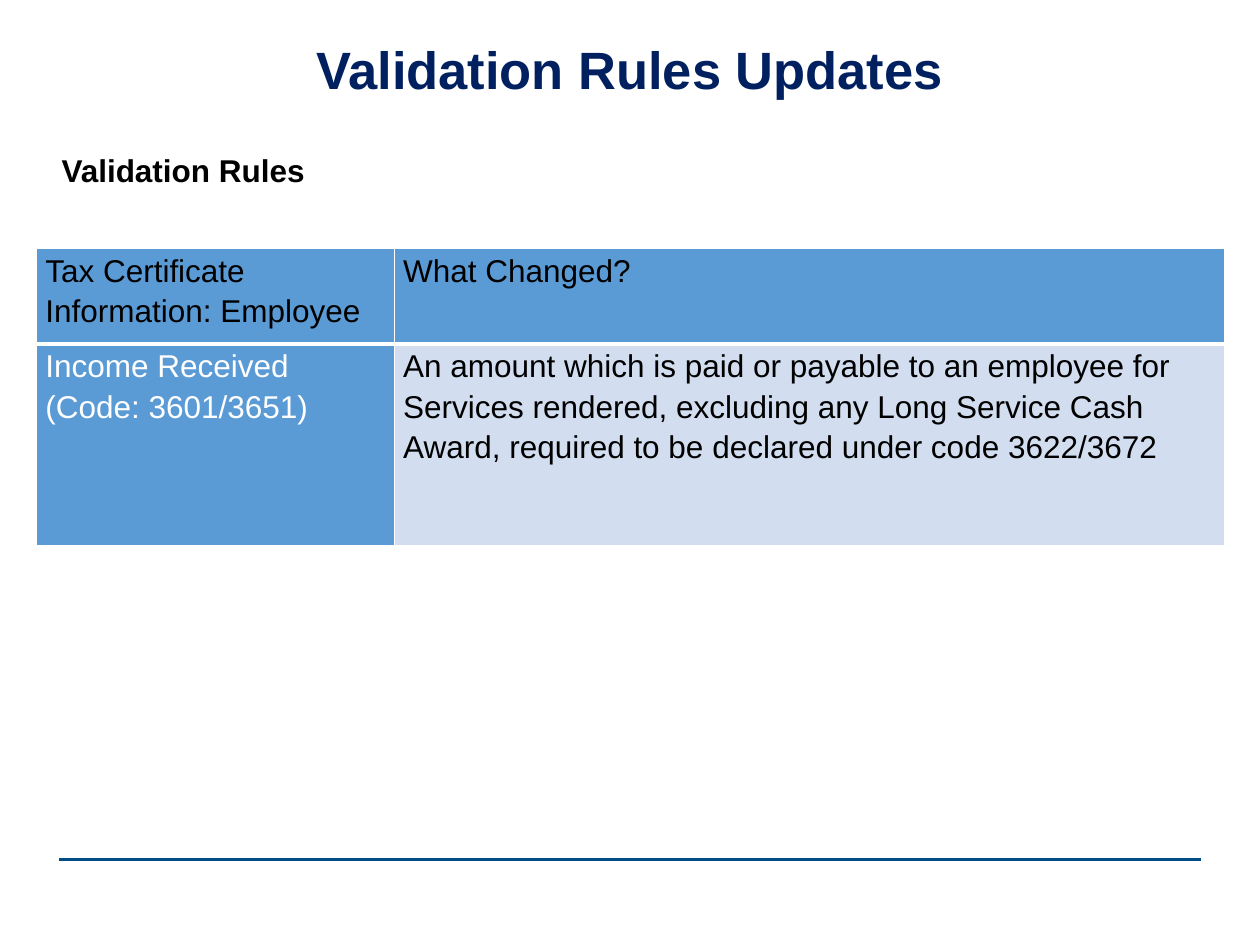
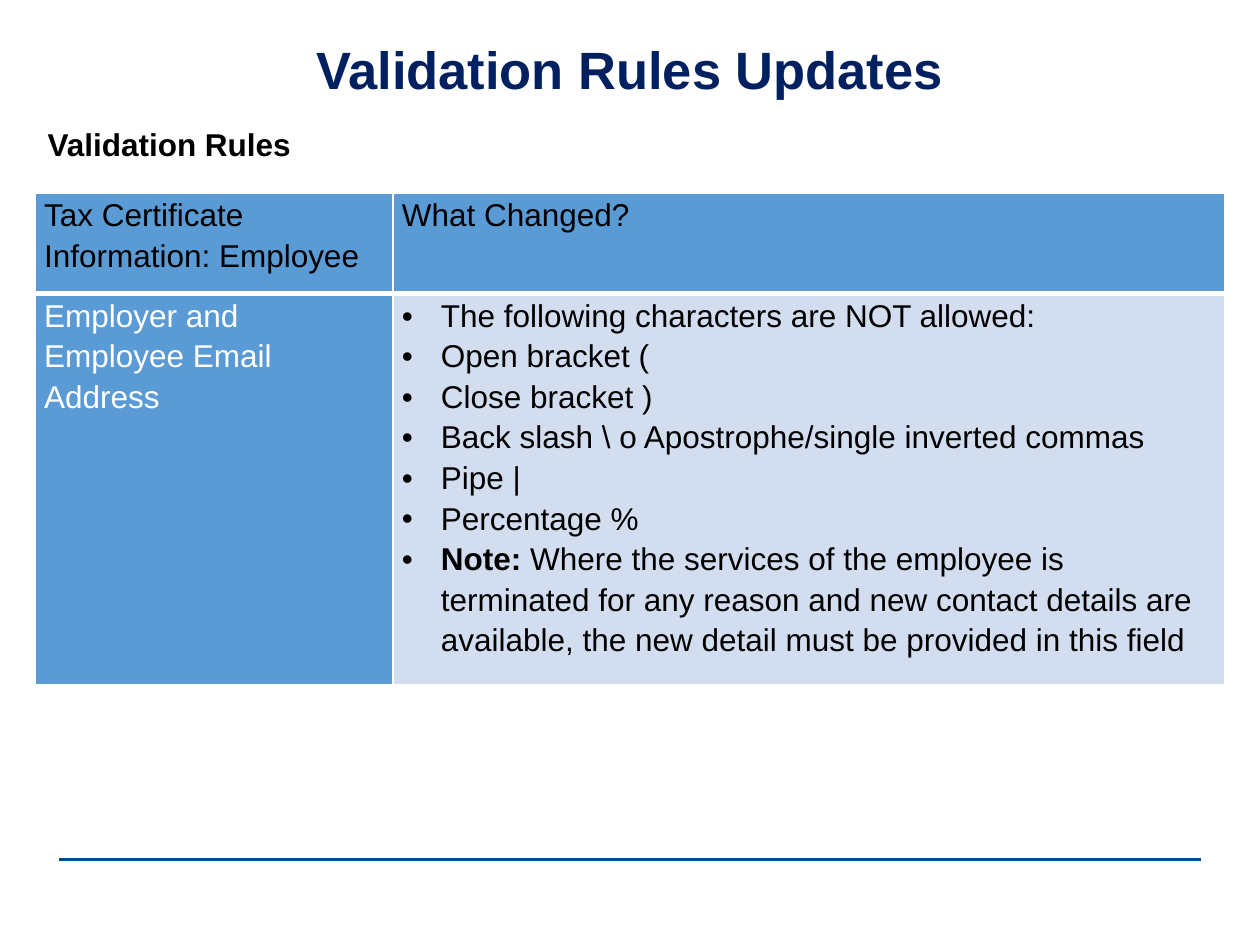
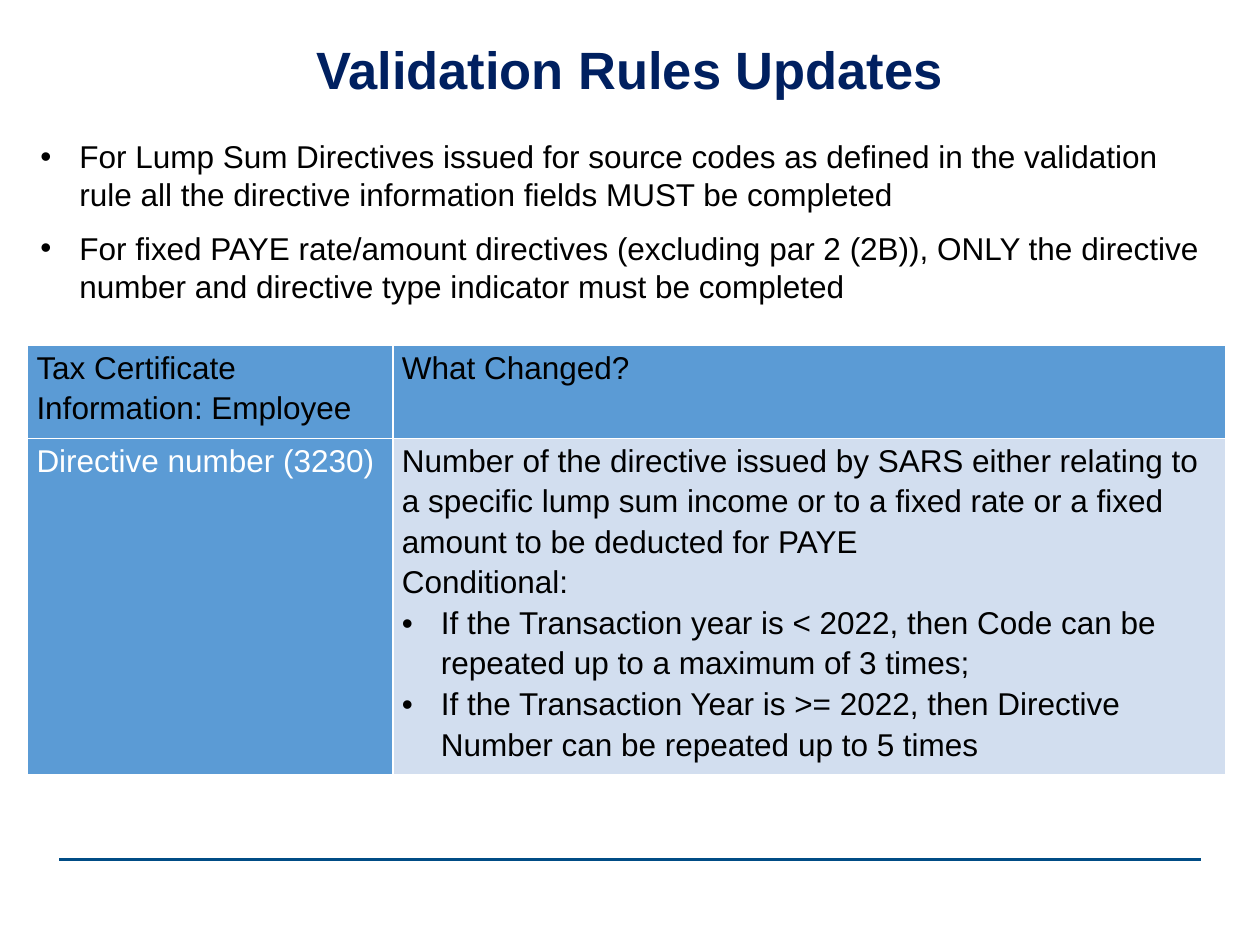
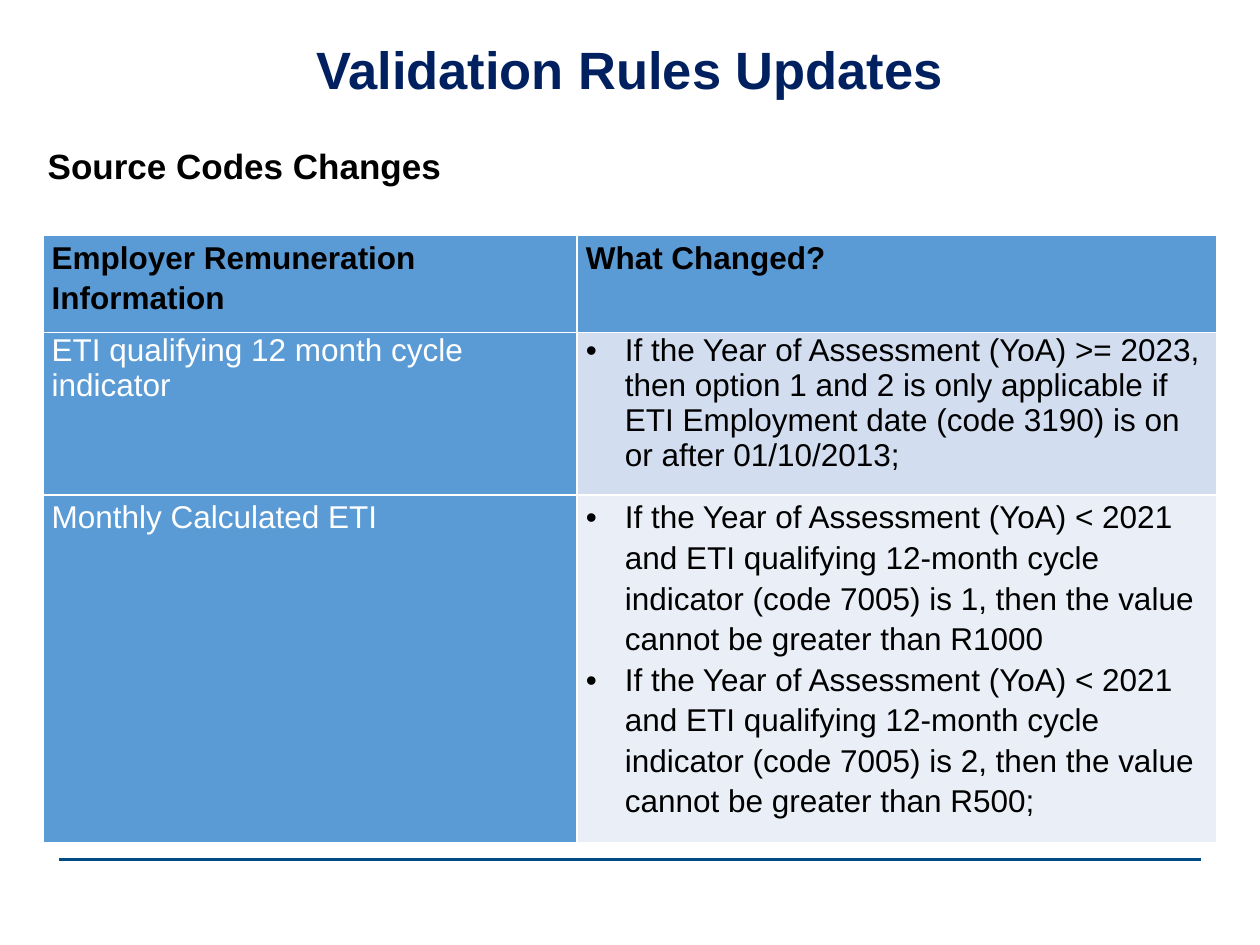
import pptx
import pptx.dml.color
import pptx.enum.shapes
import pptx.enum.text
import pptx.oxml
import pptx.oxml.ns
import pptx.util

NAVY = pptx.dml.color.RGBColor(0x00, 0x20, 0x60)
RULE_BLUE = pptx.dml.color.RGBColor(0x00, 0x4C, 0x85)
HEADER_BLUE = pptx.dml.color.RGBColor(0x5B, 0x9B, 0xD5)
BANDS = [pptx.dml.color.RGBColor(0xD2, 0xDE, 0xEF),
         pptx.dml.color.RGBColor(0xEA, 0xEF, 0xF7)]
BLACK = pptx.dml.color.RGBColor(0, 0, 0)
WHITE = pptx.dml.color.RGBColor(255, 255, 255)
FONT = "Arial"
INDENT = pptx.util.Inches(0.31)
BULLET = "• "
LEAD = "Note: "
ALIGN = pptx.enum.text.PP_ALIGN
ANCHOR = pptx.enum.text.MSO_ANCHOR
AUTO_SIZE = pptx.enum.text.MSO_AUTO_SIZE

prs = pptx.Presentation()
prs.slide_width = pptx.util.Inches(10)
prs.slide_height = pptx.util.Inches(7.5)


def grid(*lengths):
    """Turn lengths on a grid of 100 columns by 75 square rows into EMU."""
    return [round(n * prs.slide_width / 100) for n in lengths]


def write(tf, text, size=18, color=BLACK, bold=False, align=ALIGN.LEFT,
          spacing=1.0, before=0):
    """Fill a text frame, one paragraph a line; "• " starts a bullet."""
    tf.word_wrap = True
    for i, line in enumerate(text.split("\n")):
        p = tf.paragraphs[0] if i == 0 else tf.add_paragraph()
        if line.startswith(BULLET):
            line = line[len(BULLET):]
            pPr = p._p.get_or_add_pPr()
            pPr.set("marL", str(INDENT))
            pPr.set("indent", str(-INDENT))
            pPr.append(pptx.oxml.parse_xml(
                f'<a:buFont {pptx.oxml.ns.nsdecls("a")} typeface="Arial"/>'))
            pPr.append(pptx.oxml.parse_xml(
                f'<a:buChar {pptx.oxml.ns.nsdecls("a")} char="•"/>'))
        p.alignment = align
        p.line_spacing = spacing
        p.space_before = pptx.util.Pt(before if i else 0)
        lead = LEAD if line.startswith(LEAD) else ""
        for part, strong in ((lead, True), (line[len(lead):], bold)):
            if part:
                r = p.add_run()
                r.text = part
                r.font.name = FONT
                r.font.size = pptx.util.Pt(size)
                r.font.bold = strong
                r.font.color.rgb = color


TAX_HEADER = ["Tax Certificate Information: Employee", "What Changed?"]

# Lengths are grid units; "spacing" lists the line spacing of each table row.
SLIDES = [
    dict(heading="Validation Rules", heading_at=(3.9, 11.5, 93.3, 4), heading_size=18,
         table_at=(2.9, 19.7), cols=(28.4, 65.9), rows=(7.6, 16),
         spacing=(1.15, 1.15), header_bold=False,
         cells=[TAX_HEADER,
                ["Income Received (Code: 3601/3651)",
                 "An amount which is paid or payable to an employee for Services rendered, "
                 "excluding any Long Service Cash Award, required to be declared under "
                 "code 3622/3672"]]),
    dict(heading="Validation Rules", heading_at=(2.8, 9.4, 93.3, 4), heading_size=18,
         table_at=(2.8, 15.3), cols=(28.4, 66), rows=(8, 28.9),
         spacing=(1.15, 1.15), header_bold=False,
         cells=[TAX_HEADER,
                ["Employer and Employee Email Address",
                 "• The following characters are NOT allowed:\n"
                 "• Open bracket (\n"
                 "• Close bracket )\n"
                 "• Back slash \\ o Apostrophe/single inverted commas\n"
                 "• Pipe |\n"
                 "• Percentage %\n"
                 "• Note: Where the services of the employee is terminated for any reason "
                 "and new contact details are available, the new detail must be provided "
                 "in this field"]]),
    dict(body="• For Lump Sum Directives issued for source codes as defined in the "
              "validation rule all the directive information fields MUST be completed\n"
              "• For fixed PAYE rate/amount directives (excluding par 2 (2B)), ONLY the "
              "directive number and directive type indicator must be completed",
         body_at=(2.2, 10.4, 94.4, 14.1),
         table_at=(2.2, 27.4), cols=(29, 66.1), rows=(7.4, 26.7),
         spacing=(1.15, 1.15), header_bold=False,
         cells=[TAX_HEADER,
                ["Directive number (3230)",
                 "Number of the directive issued by SARS either relating to a specific lump "
                 "sum income or to a fixed rate or a fixed amount to be deducted for PAYE\n"
                 "Conditional:\n"
                 "• If the Transaction year is < 2022, then Code can be repeated up to a "
                 "maximum of 3 times;\n"
                 "• If the Transaction Year is >= 2022, then Directive Number can be "
                 "repeated up to 5 times"]]),
    dict(heading="Source Codes Changes", heading_at=(2.8, 11, 35.8, 4.7), heading_size=20,
         table_at=(3.4, 18.7), cols=(42.4, 50.8), rows=(7.7, 12.9, 25.6),
         spacing=(1.15, 1.0, 1.15), header_bold=True,
         cells=[["Employer Remuneration Information", "What Changed?"],
                ["ETI qualifying 12 month cycle indicator",
                 "• If the Year of Assessment (YoA) >= 2023, then option 1 and 2 is only "
                 "applicable if ETI Employment date (code 3190) is on or after 01/10/2013;"],
                ["Monthly Calculated ETI",
                 "\n".join(
                     "• If the Year of Assessment (YoA) < 2021 and ETI qualifying 12-month "
                     f"cycle indicator (code 7005) is {option}, then the value cannot be "
                     f"greater than {limit}"
                     for option, limit in ((1, "R1000"), (2, "R500;")))]]),
]

# Shared by all slides: the title's place and the footer rule on the master
master = prs.slide_master
master_title = master.placeholders[0]
master_title.left, master_title.top, master_title.width, master_title.height = grid(5, 3, 90, 5.2)
master_title.text_frame.vertical_anchor = ANCHOR.TOP

for number, content in enumerate(SLIDES):
    layout = prs.slide_layouts[1 if "body" in content else 5]
    s = prs.slides.add_slide(layout)
    write(s.shapes.title.text_frame, "Validation Rules Updates", size=30, color=NAVY,
          bold=True, align=ALIGN.CENTER, spacing=0.9)
    s.shapes.title.text_frame.auto_size = AUTO_SIZE.NONE

    if number == 0:
        rule = s.shapes.add_connector(pptx.enum.shapes.MSO_CONNECTOR.STRAIGHT,
                                      *grid(4.7, 68.2, 95.3, 68.2))
        rule.line.color.rgb = RULE_BLUE
        rule.line.width = pptx.util.Pt(2)
        rule.element.spPr.append(pptx.oxml.parse_xml(
            f'<a:effectLst {pptx.oxml.ns.nsdecls("a")}/>'))
        master.shapes.element.append(rule.element)

    if "body" in content:
        body = s.placeholders[1]
        body.left, body.top, body.width, body.height = grid(*content["body_at"])
        write(body.text_frame, content["body"], before=9)
        body.text_frame.auto_size = AUTO_SIZE.NONE
    else:
        heading = s.shapes.add_textbox(*grid(*content["heading_at"]))
        write(heading.text_frame, content["heading"], size=content["heading_size"], bold=True)

    cols, rows = content["cols"], content["rows"]
    table = s.shapes.add_table(len(rows), len(cols), *grid(
        *content["table_at"], sum(cols), sum(rows))).table
    for column, width in zip(table.columns, grid(*cols)):
        column.width = width
    for row, height in zip(table.rows, grid(*rows)):
        row.height = height

    for i, texts in enumerate(content["cells"]):
        for j, text in enumerate(texts):
            cell = table.cell(i, j)
            cell.margin_left, cell.margin_right = grid(0.7, 0.7)
            cell.margin_top = cell.margin_bottom = 0
            header = i == 0
            write(cell.text_frame, text, spacing=content["spacing"][i],
                  bold=header and content["header_bold"],
                  color=WHITE if j == 0 and not header else BLACK)
            cell.fill.solid()
            cell.fill.fore_color.rgb = HEADER_BLUE if header or j == 0 else BANDS[i - 1]
            for k, side in enumerate("LRTB"):
                thick = (header and side == "B") or (i == 1 and side == "T")
                cell._tc.get_or_add_tcPr().insert(k, pptx.oxml.parse_xml(
                    f'<a:ln{side} {pptx.oxml.ns.nsdecls("a")} '
                    f'w="{pptx.util.Pt(3 if thick and number < 2 else 1)}">'
                    f'<a:solidFill><a:srgbClr val="{WHITE}"/></a:solidFill></a:ln{side}>'))

prs.save("out.pptx")
